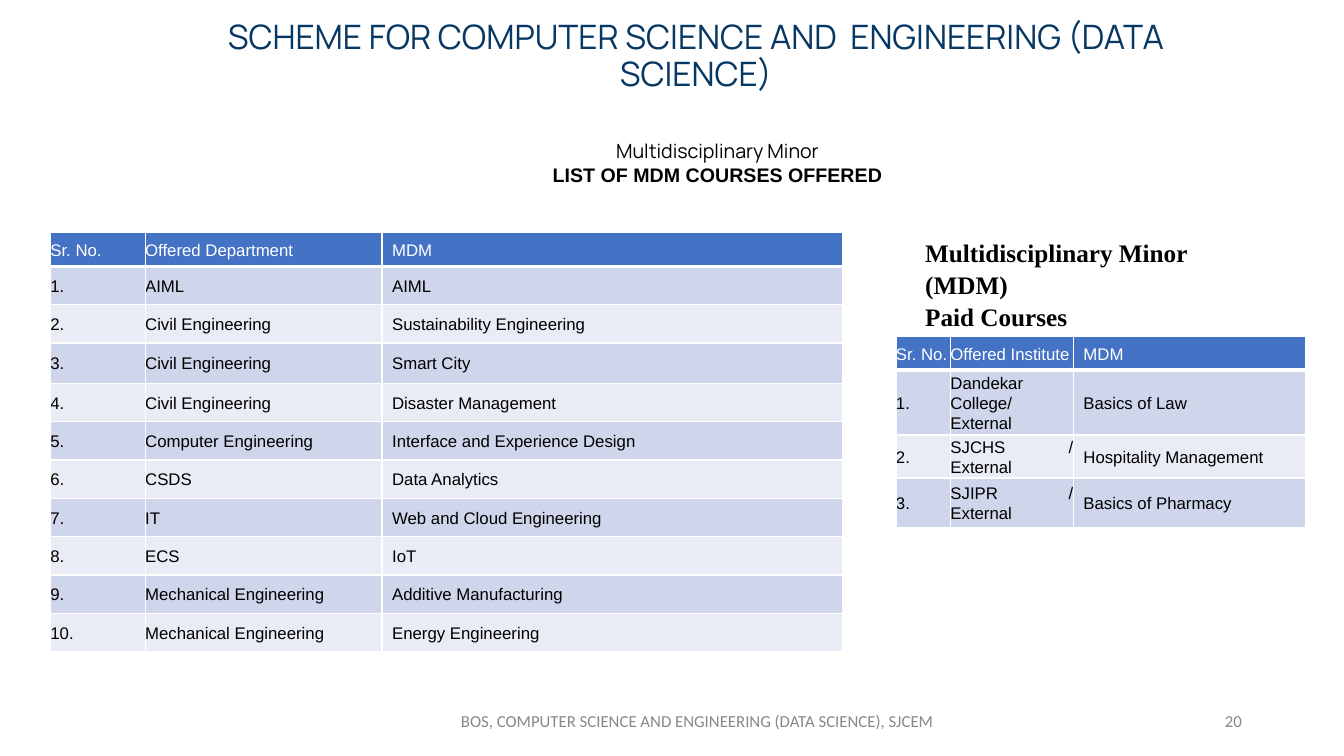
"""Build the slide listing the multidisciplinary minor courses."""
from lxml import etree
from pptx import Presentation
from pptx.dml import color
from pptx.enum import text
from pptx.oxml import ns
from pptx.util import Pt

ALIGN = text.PP_ALIGN
MIDDLE = text.MSO_ANCHOR.MIDDLE


def rgb(value):
    return color.RGBColor.from_string(value)


def add_span(para, words, size, font, colour, bold=False):
    span = para.add_run()
    span.text = words
    span.font.size = Pt(size)
    span.font.name = font
    span.font.bold = bold
    span.font.color.rgb = rgb(colour)


deck = Presentation()
deck.slide_width, deck.slide_height = Pt(960), Pt(540)
page = deck.slides.add_slide(deck.slide_layouts[5])

title = page.shapes.title
title.left, title.top, title.width, title.height = Pt(133.2), Pt(14.4), Pt(727.9), Pt(52.6)
title.text_frame.auto_size = text.MSO_AUTO_SIZE.NONE
title.text_frame.word_wrap = True
title.text_frame.vertical_anchor = MIDDLE
para = title.text_frame.paragraphs[0]
para.alignment = ALIGN.CENTER
para.line_spacing = 0.9
add_span(para, "SCHEME FOR COMPUTER SCIENCE AND  ENGINEERING (DATA SCIENCE)", 24, "Manrope", "073763")

subtitle = page.shapes.add_textbox(Pt(300.2), Pt(92.2), Pt(424.8), Pt(61.9)).text_frame
subtitle.word_wrap = True
subtitle.margin_top = subtitle.margin_bottom = Pt(7.2)
para = subtitle.paragraphs[0]
para.alignment = ALIGN.CENTER
add_span(para, "Multidisciplinary Minor", 14, "Manrope", "000000")
para = subtitle.add_paragraph()
para.alignment = ALIGN.CENTER
add_span(para, "LIST OF MDM COURSES OFFERED", 14, "Arial", "000000", True)

heading = page.shapes.add_textbox(Pt(653.8), Pt(164.2), Pt(239.8), Pt(76.3)).text_frame
heading.word_wrap = True
para = heading.paragraphs[0]
para.line_spacing = 1.07
add_span(para, "Multidisciplinary Minor (MDM)", 18, "Times New Roman", "000000", True)
para.add_line_break()
add_span(para, "Paid Courses", 18, "Times New Roman", "000000", True)

footers = [
    (318.2, 360, ALIGN.CENTER, "BOS, COMPUTER SCIENCE AND ENGINEERING (DATA SCIENCE), SJCEM"),
    (678.2, 216, ALIGN.RIGHT, "20"),
]
for left, width, alignment, words in footers:
    footer = page.shapes.add_textbox(Pt(left), Pt(500.4), Pt(width), Pt(28.8)).text_frame
    footer.word_wrap = True
    footer.vertical_anchor = MIDDLE
    para = footer.paragraphs[0]
    para.alignment = alignment
    add_span(para, words, 12, "Calibri", "888888")

offered_courses = [
    ("Offered Department", "MDM"),
    ("AIML", "AIML"),
    ("Civil Engineering", "Sustainability Engineering"),
    ("Civil Engineering", "Smart City"),
    ("Civil Engineering", "Disaster Management"),
    ("Computer Engineering", "Interface and Experience Design"),
    ("CSDS", "Data Analytics"),
    ("IT", "Web and Cloud Engineering"),
    ("ECS", "IoT"),
    ("Mechanical Engineering", "Additive Manufacturing"),
    ("Mechanical Engineering", "Energy Engineering"),
]
paid_courses = [
    ("Offered Institute", "MDM"),
    ("Dandekar College/ External", "Basics of Law"),
    ("SJCHS / External", "Hospitality Management"),
    ("SJIPR / External", "Basics of Pharmacy"),
]
tables = [
    (36, 166.3, [67.7, 169.2, 329], [24] + [27.4] * 2 + [28.8] + [27.4] * 7, offered_courses),
    (640, 240.5, [38.9, 87.8, 165.6], [24, 24, 27.4, 35.3], paid_courses),
]
for left, top, widths, heights, courses in tables:
    grid = page.shapes.add_table(
        len(heights), len(widths), Pt(left), Pt(top), Pt(sum(widths)), Pt(sum(heights))).table
    for column, width in zip(grid.columns, widths):
        column.width = Pt(width)
    for number, (height, course) in enumerate(zip(heights, courses)):
        grid.rows[number].height = Pt(height)
        header = number == 0
        fill = "4472C4" if header else ("E9EBF5", "CFD5EA")[number % 2]
        label = "Sr. No." if header else f"{number}."
        for position, words in enumerate((label, *course)):
            cell = grid.cell(number, position)
            cell.vertical_anchor = MIDDLE
            if position < 2:
                cell.margin_left = cell.margin_right = cell.margin_top = cell.margin_bottom = 0
            properties = cell._tc.get_or_add_tcPr()
            for side in "LRTB":
                weight = 3 if header and side == "B" else 1
                border = etree.SubElement(properties, ns.qn(f"a:ln{side}"), w=str(Pt(weight)))
                paint = etree.SubElement(border, ns.qn("a:solidFill"))
                etree.SubElement(paint, ns.qn("a:srgbClr"), val="FFFFFF")
            cell.fill.solid()
            cell.fill.fore_color.rgb = rgb(fill)
            para = cell.text_frame.paragraphs[0]
            para.alignment = ALIGN.JUSTIFY
            para.line_spacing = 1.07
            para.space_after = Pt(8)
            add_span(para, words, 12, "Arial", "FFFFFF" if header else "000000")

deck.save("out.pptx")
